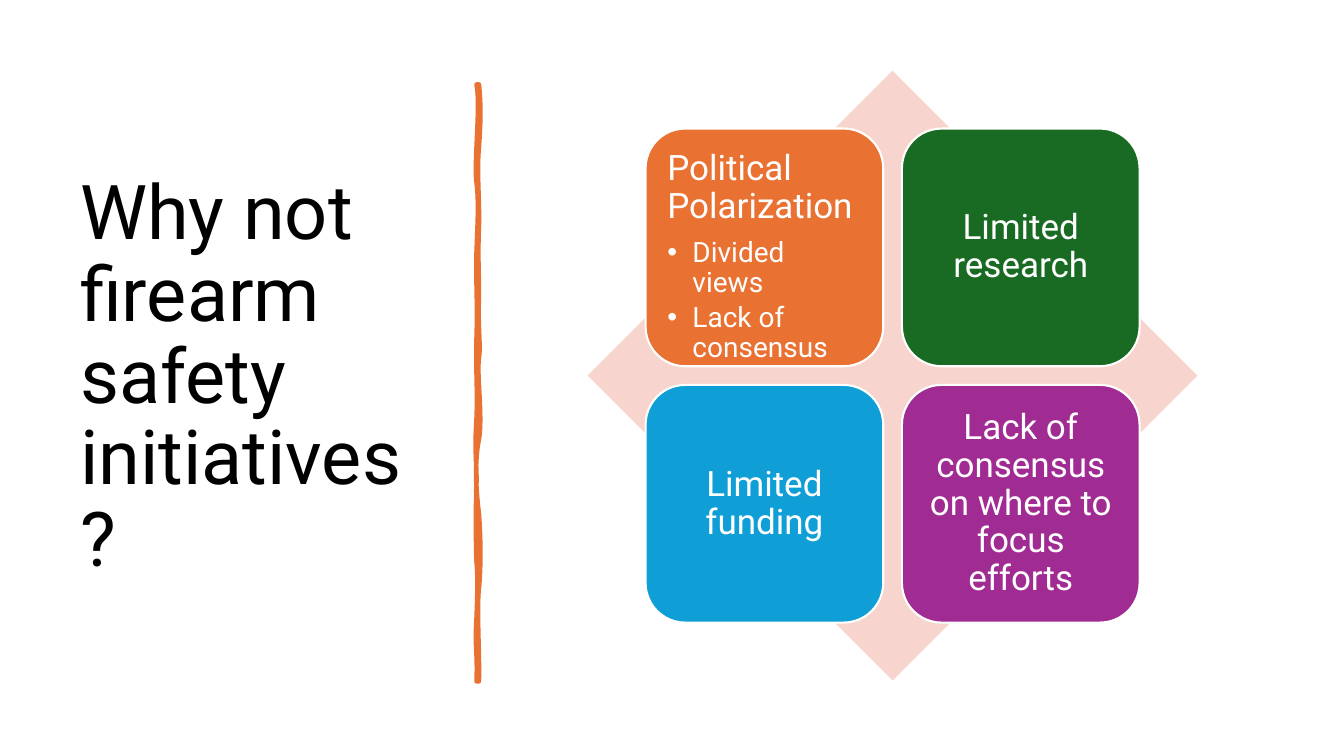
import pptx
import pptx.dml.color
import pptx.enum.shapes
import pptx.enum.text
import pptx.oxml
import pptx.oxml.ns
import pptx.util

TITLE = "Why not firearm safety initiatives?"
CARDS = [
    ("Political Polarization", ["Divided views", "Lack of consensus"], "orange"),
    ("Limited research", [], "green"),
    ("Limited funding", [], "blue"),
    ("Lack of consensus on where to focus efforts", [], "purple"),
]
COLORS = {
    "black": "000000", "white": "FFFFFF", "pink": "F7D5CE", "orange": "E97132",
    "green": "196B24", "blue": "0F9ED5", "purple": "A02B93",
}
FONT = "Roboto"
TITLE_BOX = (1.77, 1.78, 9.35, 15.52)
DIAMOND_BOX = (14.81, 1.78, 15.37, 15.37)
CARD_SIZE, CARD_PITCH = 5.99, 6.46
DIVIDER_START = (12.07, 2.13)
DIVIDER_CURVES = [
    ((12.12, 2.59), (12.12, 3.02), (12.07, 3.71)),
    ((12.01, 4.39), (12.09, 4.95), (12.07, 5.74)),
    ((12.04, 6.53), (12.07, 6.65), (12.07, 7.47)),
    ((12.04, 8.26), (12.12, 8.69), (12.07, 9.04)),
    ((12.01, 9.4), (12.17, 10.52), (12.07, 11.07)),
    ((11.96, 11.61), (11.99, 12.29), (12.07, 12.95)),
    ((12.12, 13.61), (12.12, 14.33), (12.07, 14.83)),
    ((12.01, 15.32), (12.09, 16.51), (12.07, 17.17)),
    ((12.04, 17.17), (12.01, 17.17), (12.01, 17.17)),
    ((12.04, 16.41), (11.96, 16.36), (12.01, 15.57)),
    ((12.04, 14.81), (12.04, 14.48), (12.01, 14.15)),
    ((11.99, 13.82), (11.99, 12.57), (12.01, 12.12)),
    ((12.01, 11.66), (11.96, 11.3), (12.01, 10.54)),
    ((12.04, 9.8), (11.99, 9.47), (12.01, 8.51)),
    ((12.04, 7.57), (11.99, 7.14), (12.01, 6.35)),
    ((12.04, 5.54), (12.07, 5.08), (12.01, 4.6)),
    ((11.94, 4.14), (12.12, 2.64), (12.01, 2.13)),
]

Cm, Pt = pptx.util.Cm, pptx.util.Pt
MSO_SHAPE = pptx.enum.shapes.MSO_SHAPE
ANCHOR = pptx.enum.text.MSO_ANCHOR
ALIGN = pptx.enum.text.PP_ALIGN
NS = pptx.oxml.ns.nsdecls("a")


def rgb(name):
    return pptx.dml.color.RGBColor.from_string(COLORS[name])


def paint(s, fill, line=None, width=0):
    s.shadow.inherit = False
    s.fill.solid()
    s.fill.fore_color.rgb = rgb(fill)
    if line:
        s.line.color.rgb = rgb(line)
        s.line.width = Pt(width)
    else:
        s.line.fill.background()


def write(p, text, size, color, align, after=0):
    p.text = text
    p.alignment = align
    p.line_spacing = 0.9
    p.space_after = Pt(after)
    for r in p.runs:
        r.font.name = FONT
        r.font.size = Pt(size)
        r.font.color.rgb = rgb(color)


def add_bullet(p):
    pPr = p._p.get_or_add_pPr()
    pPr.set("marL", str(Cm(0.63)))
    pPr.set("indent", str(-Cm(0.63)))
    pPr.append(pptx.oxml.parse_xml(f'<a:buFont {NS} typeface="Arial"/>'))
    pPr.append(pptx.oxml.parse_xml(f'<a:buChar {NS} char="•"/>'))


def add_title(slide):
    tf = slide.shapes.add_textbox(*map(Cm, TITLE_BOX)).text_frame
    tf.word_wrap = True
    tf.vertical_anchor = ANCHOR.MIDDLE
    write(tf.paragraphs[0], TITLE, 54, "black", ALIGN.LEFT)


def add_divider(slide):
    builder = slide.shapes.build_freeform(*map(Cm, DIVIDER_START))
    builder.add_line_segments(
        [tuple(map(Cm, curve[-1])) for curve in DIVIDER_CURVES], close=True)
    s = builder.convert_to_shape()
    paint(s, "orange", "orange", 3.25)
    s.line._get_or_add_ln().append(pptx.oxml.parse_xml(f"<a:round {NS}/>"))
    segments = s._element.findall(".//" + pptx.oxml.ns.qn("a:lnTo"))
    for segment, curve in zip(segments, DIVIDER_CURVES):
        points = "".join(
            f'<a:pt x="{Cm(x) - s.left}" y="{Cm(y) - s.top}"/>' for x, y in curve)
        bezier = pptx.oxml.parse_xml(f"<a:cubicBezTo {NS}>{points}</a:cubicBezTo>")
        segment.getparent().replace(segment, bezier)


def add_card(slide, left, top, heading, bullets, color):
    s = slide.shapes.add_shape(
        MSO_SHAPE.ROUNDED_RECTANGLE, Cm(left), Cm(top), Cm(CARD_SIZE), Cm(CARD_SIZE))
    paint(s, color, "white", 1.5)
    tf = s.text_frame
    tf.word_wrap = True
    tf.margin_left = tf.margin_right = tf.margin_top = tf.margin_bottom = Cm(0.26)
    tf.vertical_anchor = ANCHOR.TOP if bullets else ANCHOR.MIDDLE
    align = ALIGN.LEFT if bullets else ALIGN.CENTER
    write(tf.paragraphs[0], heading, 25, "white", align, 8.75)
    for text in bullets:
        p = tf.add_paragraph()
        write(p, text, 20, "white", align, 3)
        add_bullet(p)


def main():
    """Build the slide on obstacles to firearm safety initiatives."""
    prs = pptx.Presentation()
    prs.slide_width, prs.slide_height = Cm(33.87), Cm(19.05)
    slide = prs.slides.add_slide(prs.slide_layouts[6])
    add_title(slide)
    add_divider(slide)
    diamond = slide.shapes.add_shape(MSO_SHAPE.DIAMOND, *map(Cm, DIAMOND_BOX))
    paint(diamond, "pink")
    left, top, width, height = DIAMOND_BOX
    grid = CARD_PITCH + CARD_SIZE
    for i, card in enumerate(CARDS):
        row, col = divmod(i, 2)
        add_card(slide, left + (width - grid) / 2 + col * CARD_PITCH,
                 top + (height - grid) / 2 + row * CARD_PITCH, *card)
    prs.save("out.pptx")


if __name__ == "__main__":
    main()
